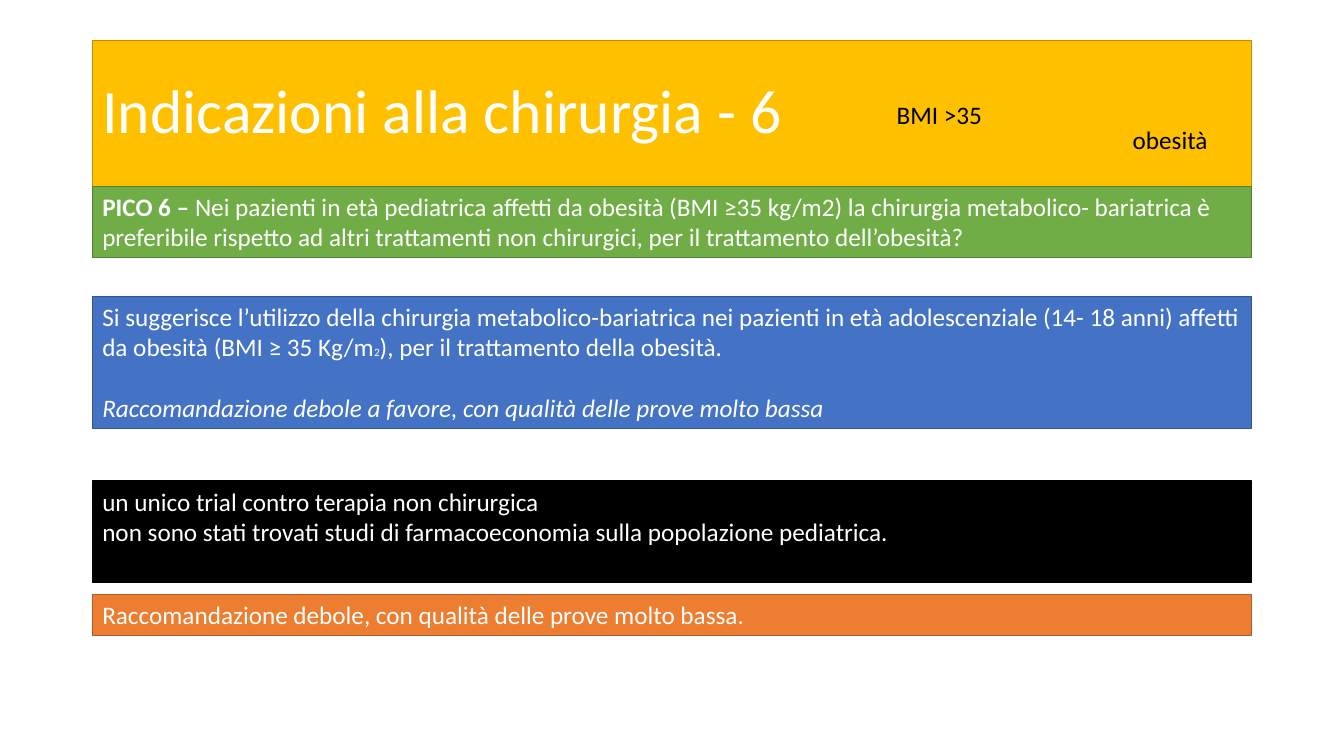
from dataclasses import dataclass

from pptx import Presentation
from pptx.dml.color import RGBColor
from pptx.enum.shapes import MSO_SHAPE as Shape
from pptx.enum.text import MSO_ANCHOR as Anchor, PP_ALIGN as Align
from pptx.slide import Slide
from pptx.text.text import TextFrame
from pptx.util import Pt

FONT = "Calibri"
WHITE, BLACK = "FFFFFF", "000000"
BAND_LEFT, BAND_WIDTH = 66, 828


@dataclass(frozen=True)
class Span:
    text: str
    size: float = 18
    bold: bool = False
    italic: bool = False


@dataclass(frozen=True)
class Para:
    spans: tuple[Span, ...]
    before: float = 0
    spacing: float = 1.0


@dataclass(frozen=True)
class Band:
    top: float
    height: float
    fill: str
    line: str
    paras: tuple[Para, ...]
    anchor: Anchor = Anchor.TOP


@dataclass(frozen=True)
class Label:
    left: float
    top: float
    width: float
    text: str


BANDS = (
    # Title
    Band(28.75, 104.4, "FFC000", "BD8E00",
         (Para((Span("Indicazioni alla chirurgia - 6", 44),), spacing=0.9),),
         Anchor.MIDDLE),
    # Question
    Band(133.15, 50.9, "70AD47", "538035", (Para((
        Span("PICO 6 – ", bold=True),
        Span("Nei pazienti in età pediatrica affetti da obesità (BMI ≥35 kg/m2) "
             "la chirurgia metabolico- bariatrica è preferibile rispetto ad altri "
             "trattamenti non chirurgici, per il trattamento dell’obesità?"),
    )),)),
    # Recommendation
    Band(211.6, 94.5, "4472C4", "325491", (
        Para((
            Span("Si suggerisce l’utilizzo della chirurgia metabolico-bariatrica nei "
                 "pazienti in età adolescenziale (14- 18 anni) affetti da obesità "
                 "(BMI ≥ 35 Kg/m"),
            Span("2", 8),
            Span("), per il trattamento della obesità."),
        )),
        Para((Span("Raccomandazione debole a favore, con qualità delle prove "
                   "molto bassa", italic=True),), before=22),
    )),
    # Evidence
    Band(343.6, 72.7, BLACK, BLACK, (
        Para((Span("un unico trial contro terapia non chirurgica"),)),
        Para((Span("non sono stati trovati studi di farmacoeconomia sulla "
                   "popolazione pediatrica."),)),
    )),
    # Conclusion
    Band(424.7, 29.1, "ED7D31", "AF5C24", (
        Para((Span("Raccomandazione debole, con qualità delle prove molto bassa."),)),
    )),
)

LABELS = (
    Label(802, 85.3, 73.4, "obesità"),
    Label(633.4, 67.5, 193.7, "BMI >35"),
)


def rgb(color: str) -> RGBColor:
    return RGBColor.from_string(color)


def write(tf: TextFrame, paras: tuple[Para, ...], color: str) -> None:
    tf.word_wrap = True
    for i, para in enumerate(paras):
        p = tf.add_paragraph() if i else tf.paragraphs[0]
        p.alignment = Align.LEFT
        p.line_spacing = para.spacing
        if para.before:
            p.space_before = Pt(para.before)
        for span in para.spans:
            r = p.add_run()
            r.text = span.text
            r.font.name = FONT
            r.font.size = Pt(span.size)
            r.font.bold = span.bold
            r.font.italic = span.italic
            r.font.color.rgb = rgb(color)


def draw_band(s: Slide, band: Band) -> None:
    sp = s.shapes.add_shape(Shape.RECTANGLE, Pt(BAND_LEFT), Pt(band.top),
                            Pt(BAND_WIDTH), Pt(band.height))
    sp.shadow.inherit = False
    sp.fill.solid()
    sp.fill.fore_color.rgb = rgb(band.fill)
    sp.line.color.rgb = rgb(band.line)
    sp.line.width = Pt(1)
    sp.text_frame.vertical_anchor = band.anchor
    write(sp.text_frame, band.paras, WHITE)


def draw_label(s: Slide, label: Label) -> None:
    sp = s.shapes.add_textbox(Pt(label.left), Pt(label.top), Pt(label.width), Pt(29.1))
    write(sp.text_frame, (Para((Span(label.text),)),), BLACK)


def main() -> None:
    prs = Presentation()
    prs.slide_width, prs.slide_height = Pt(960), Pt(540)
    s = prs.slides.add_slide(prs.slide_layouts[6])
    for band in BANDS:
        draw_band(s, band)
    for label in LABELS:
        draw_label(s, label)
    prs.save("out.pptx")


if __name__ == "__main__":
    main()
